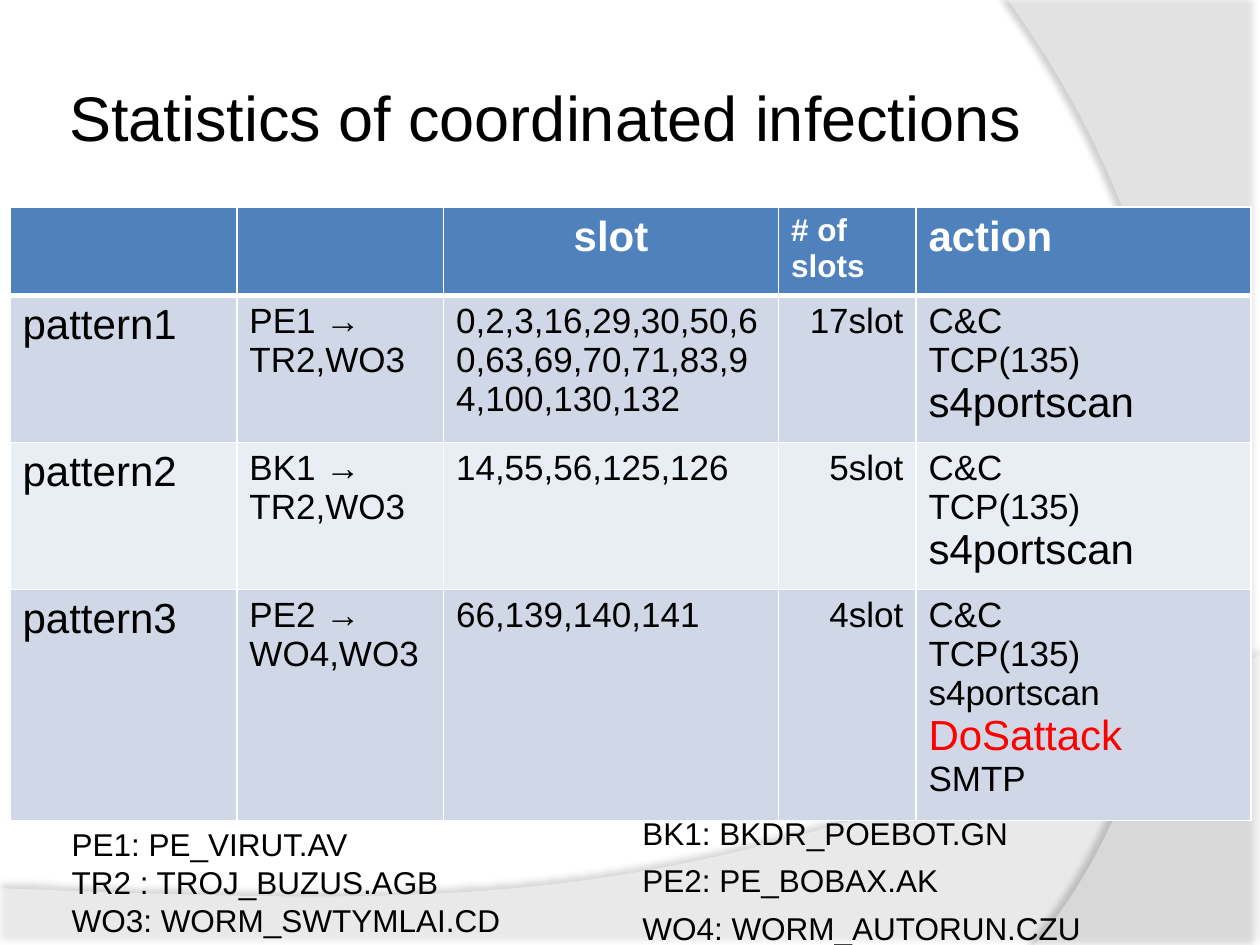
import pptx
import pptx.util
import pptx.dml.color
import pptx.enum.text
import pptx.oxml
import pptx.oxml.ns

W, H = pptx.util.Inches(10), pptx.util.Inches(7.5)
NS = pptx.oxml.ns.nsdecls("a")
qn = pptx.oxml.ns.qn
hue = pptx.dml.color.RGBColor.from_string
align = pptx.enum.text.PP_ALIGN
LEFT, MID, RIGHT = align.LEFT, align.CENTER, align.RIGHT


def write(frame, lines, color="000000", side=LEFT, bold=False, gap=0):
    """Fill a text frame with (text, size) or (text, size, colour) lines."""
    frame.word_wrap = True
    for i, (text, size, *own) in enumerate(lines):
        par = frame.add_paragraph() if i else frame.paragraphs[0]
        par.text = text
        par.alignment = side
        par.space_before = pptx.util.Pt(gap if i else 0)
        par.font.name = "Arial"
        par.font.size = pptx.util.Pt(size)
        par.font.bold = bold
        par.font.color.rgb = hue(own[0] if own else color)


deck = pptx.Presentation()
deck.slide_width, deck.slide_height = W, H
slide = deck.slides.add_slide(deck.slide_layouts[6])
shapes = slide.shapes

# Backdrop waves: straight corners, then one Bezier edge, in shares of the slide.
# Then fill opacity, shadow opacity, blur and distance in points, direction.
waves = [
    ([(0, 0.94), (0, 1), (1, 1)],
     [(1, 0.693), (0.559, 0.972), (0.391, 0.959), (0, 0.94)],
     45, 35, 4, 3.5, 270),
    ([(1, 0), (1, 1)],
     [(0.821, 1), (0.935, 0.825), (1.018, 0.4), (0.8, 0)],
     40, 45, 4, 4, 180),
]
for ends, curve, clear, dark, blur, dist, turn in waves:
    points = list(ends)
    for step in range(41):
        t = step / 40
        mix = ((1 - t) ** 3, 3 * t * (1 - t) ** 2, 3 * t * t * (1 - t), t ** 3)
        points.append(tuple(sum(m * p[k] for m, p in zip(mix, curve)) for k in (0, 1)))
    points = [(round(x * W), round(y * H)) for x, y in points]
    pen = shapes.build_freeform(*points[0])
    pen.add_line_segments(points[1:], close=True)
    wave = pen.convert_to_shape()
    wave.line.fill.background()
    wave.fill.solid()
    wave.fill.fore_color.rgb = hue("FFFFFF")
    wave.shadow.inherit = False
    props = wave.element.spPr
    props.find(".//" + qn("a:srgbClr")).append(
        pptx.oxml.parse_xml(f'<a:alpha {NS} val="{clear * 1000}"/>'))
    props.find(qn("a:effectLst")).append(pptx.oxml.parse_xml(
        f'<a:outerShdw {NS} blurRad="{pptx.util.Pt(blur)}" dist="{pptx.util.Pt(dist)}" '
        f'dir="{turn * 60000}" algn="ctr" rotWithShape="0"><a:srgbClr val="000000">'
        f'<a:alpha val="{dark * 1000}"/></a:srgbClr></a:outerShdw>'))

# Title
title = shapes.add_textbox(int(W * 0.05), int(H * 0.04), int(W * 0.817), int(H / 6)).text_frame
title.margin_left = title.margin_right = pptx.util.Inches(0.05)
title.vertical_anchor = pptx.enum.text.MSO_ANCHOR.MIDDLE
write(title, [("Statistics of coordinated infections", 36)])

# Infection table
scan = [("C&C", 20), ("TCP(135)", 20), ("s4portscan", 24)]
attack = [*scan[:2], ("s4portscan", 20), ("DoSattack", 24, "FF0000"), ("SMTP", 20)]
rows = [
    ("", "", "slot", "# of slots", [("action", 24)]),
    ("pattern1", "PE1 → TR2,WO3",
     "0,2,3,16,29,30,50,60,63,69,70,71,83,94,100,130,132", "17slot", scan),
    ("pattern2", "BK1 → TR2,WO3", "14,55,56,125,126", "5slot", scan),
    ("pattern3", "PE2 → WO4,WO3", "66,139,140,141", "4slot", attack),
]
wide = [1.8, 1.64, 2.66, 1.09, 2.66]
tall = [0.34, 0.9, 0.69, 0.48]
fills = ["4F81BD", "D0D8E8", "E9EDF4", "D0D8E8"]
sizes = [(24, 20, 24, 18), *[(24, 20, 20, 20)] * 3]
sides = [(LEFT, LEFT, MID, LEFT, LEFT), *[(LEFT, LEFT, LEFT, RIGHT, LEFT)] * 3]

full = int(H * 0.65)
holder = shapes.add_table(4, 5, int(W * 0.008), int(H * 0.219), int(W * 0.984), full)
table = holder.table
for col, size in zip(table.columns, wide):
    col.width = pptx.util.Inches(size)
for row, size in zip(table.rows, tall):
    row.height = pptx.util.Inches(size)
holder.height = full

for r, row in enumerate(rows):
    for c, value in enumerate(row):
        cell = table.cell(r, c)
        props = cell._tc.get_or_add_tcPr()
        for edge in "LRTB":
            thick = 3 if (r, edge) in ((0, "B"), (1, "T")) else 1
            props.append(pptx.oxml.parse_xml(
                f'<a:ln{edge} {NS} w="{pptx.util.Pt(thick)}"><a:solidFill>'
                f'<a:srgbClr val="FFFFFF"/></a:solidFill></a:ln{edge}>'))
        cell.fill.solid()
        cell.fill.fore_color.rgb = hue(fills[r])
        if value:
            lines = [(value, sizes[r][c])] if isinstance(value, str) else value
            write(cell.text_frame, lines, "000000" if r else "FFFFFF", sides[r][c], r == 0)

# Legend of the short names
legend = [
    (0.047, 0.867, 0.135, 0,
     ["PE1: PE_VIRUT.AV", "TR2 : TROJ_BUZUS.AGB", "WO3: WORM_SWTYMLAI.CD"]),
    (0.5, 0.855, 0.199, 5.4,
     ["BK1: BKDR_POEBOT.GN", "PE2: PE_BOBAX.AK", "WO4: WORM_AUTORUN.CZU"]),
]
for x, y, high, gap, names in legend:
    box = shapes.add_textbox(int(W * x), int(H * y), int(W / 2), int(H * high))
    write(box.text_frame, [(name, 18) for name in names], gap=gap)

deck.save("out.pptx")
